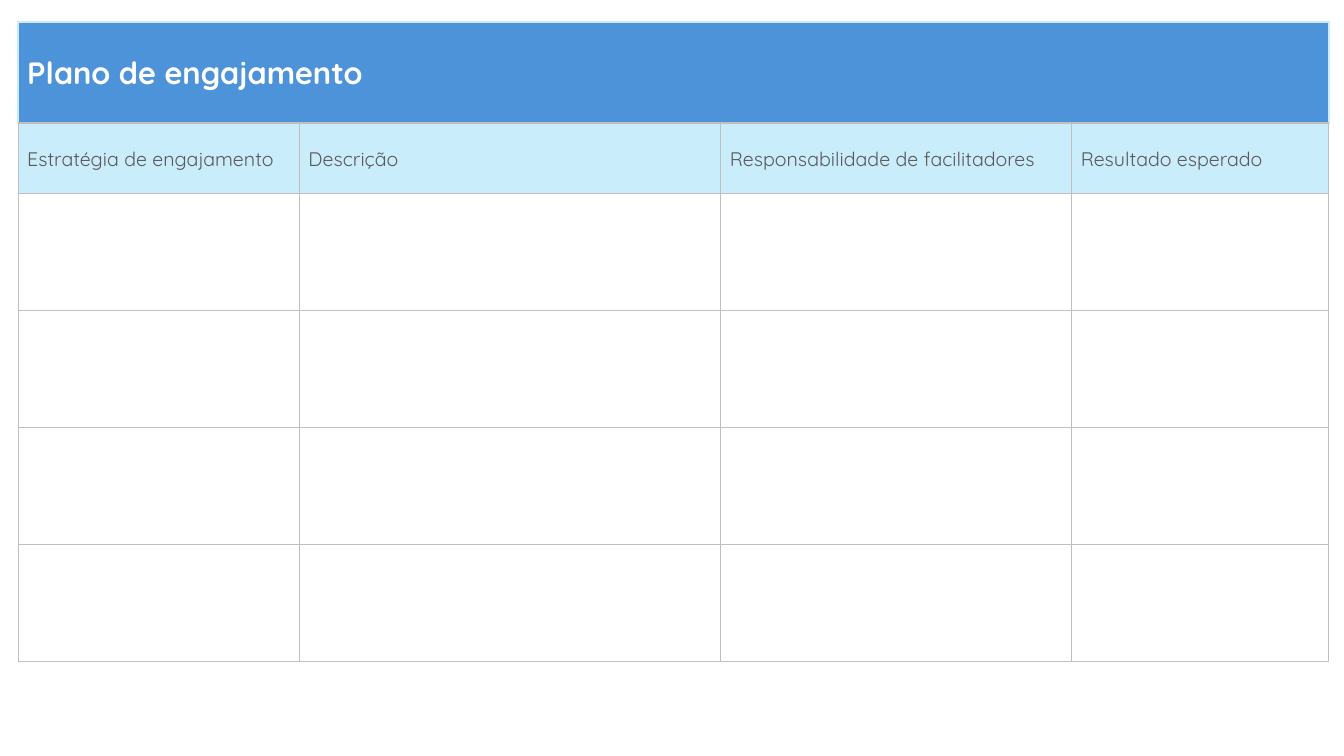
from dataclasses import dataclass

from lxml.etree import SubElement as Sub
from pptx import Presentation
from pptx.dml.color import RGBColor as Color
from pptx.enum.text import MSO_ANCHOR as Anchor
from pptx.oxml.ns import qn
from pptx.table import _Cell as Cell
from pptx.util import Inches, Pt

WHITE = Color(0xFF, 0xFF, 0xFF)
BLUE = Color(0x4D, 0x93, 0xD9)
PALE = Color(0xCA, 0xED, 0xFB)
GRAY = Color(0x59, 0x59, 0x59)
RULE = Color(0xBF, 0xBF, 0xBF)

FONT = "Quicksand"
LEFT, TOP = 0.18, 0.22
COLS = (2.79, 4.18, 3.48, 2.55)
ROWS = (1, 0.7) + (1.16,) * 4
HEADS = (
    "Estratégia de engajamento",
    "Descrição",
    "Responsabilidade de facilitadores",
    "Resultado esperado",
)


@dataclass(frozen=True)
class Style:
    size: int
    ink: Color
    fill: Color
    bold: bool = False


@dataclass(frozen=True)
class Edge:
    color: Color
    width: float


TITLE = Style(22, WHITE, BLUE, True)
HEAD = Style(14, GRAY, PALE)
THIN = Edge(RULE, 1)
THICK = Edge(PALE, 1.5)
GRID = dict.fromkeys("LRTB", THIN)
FRAME = dict.fromkeys("LRT", THICK) | {"B": THIN}


def border(cell: Cell, edges: dict[str, Edge]) -> None:
    props = cell._tc.get_or_add_tcPr()
    for side, edge in edges.items():
        line = Sub(props, qn(f"a:ln{side}"), w=str(Pt(edge.width)))
        fill = Sub(line, qn("a:solidFill"))
        Sub(fill, qn("a:srgbClr"), val=str(edge.color))


def write(cell: Cell, text: str, style: Style) -> None:
    cell.text = text
    cell.vertical_anchor = Anchor.MIDDLE
    cell.margin_left = Inches(0.09)
    cell.margin_right = cell.margin_top = Inches(0.01)
    cell.margin_bottom = 0
    cell.fill.solid()
    cell.fill.fore_color.rgb = style.fill
    font = cell.text_frame.paragraphs[0].font
    font.name = FONT
    font.size = Pt(style.size)
    font.bold = style.bold
    font.color.rgb = style.ink


def main() -> None:
    deck = Presentation()
    deck.slide_width, deck.slide_height = Inches(13.33), Inches(7.5)
    slide = deck.slides.add_slide(deck.slide_layouts[6])
    box = map(Inches, (LEFT, TOP, sum(COLS), sum(ROWS)))
    plan = slide.shapes.add_table(len(ROWS), len(COLS), *box).table
    plan.first_row = plan.horz_banding = False
    for col, width in zip(plan.columns, COLS):
        col.width = Inches(width)
    for index, (row, height) in enumerate(zip(plan.rows, ROWS)):
        row.height = Inches(height)
        for cell in row.cells:
            border(cell, GRID if index else FRAME)
            cell.fill.background()

    title = plan.cell(0, 0)
    title.merge(plan.cell(0, len(COLS) - 1))
    write(title, "Plano de engajamento", TITLE)
    for col, text in enumerate(HEADS):
        write(plan.cell(1, col), text, HEAD)
    deck.save("out.pptx")


if __name__ == "__main__":
    main()
